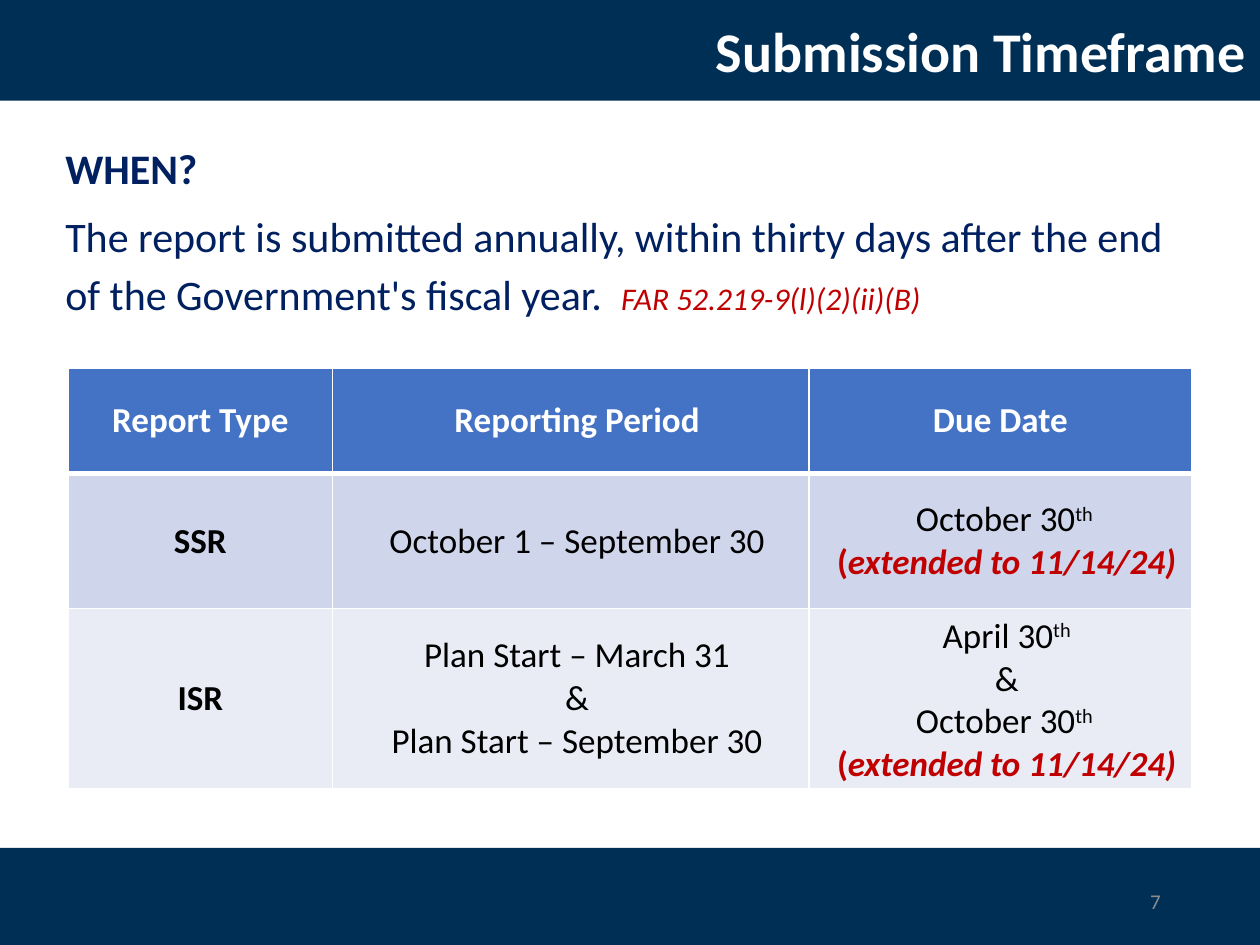
import pptx
import pptx.dml.color
import pptx.enum.shapes
import pptx.enum.text
import pptx.oxml
import pptx.oxml.ns
import pptx.util

Inches = pptx.util.Inches
Pt = pptx.util.Pt
ALIGN = pptx.enum.text.PP_ALIGN
MIDDLE = pptx.enum.text.MSO_ANCHOR.MIDDLE
NAVY, WHITE, BLACK, RED = "002F56", "FFFFFF", "000000", "C00000"


def color(value):
    return pptx.dml.color.RGBColor.from_string(value)


def write(frame, paragraphs, base, layout):
    """Fill a text frame; each paragraph is a list of (text, changes to base)."""
    for index, runs in enumerate(paragraphs):
        paragraph = frame.add_paragraph() if index else frame.paragraphs[0]
        for name, value in layout.items():
            setattr(paragraph, name, value)
        for text, changes in runs:
            run = paragraph.add_run()
            run.text = text
            run.font.name = "Calibri"
            for name, value in {**base, **changes}.items():
                if name == "color":
                    run.font.color.rgb = color(value)
                elif name == "baseline":
                    run._r.get_or_add_rPr().set("baseline", str(value))
                else:
                    setattr(run.font, name, value)


presentation = pptx.Presentation()
presentation.slide_width, presentation.slide_height = Inches(10), Inches(7.5)
slide = presentation.slides.add_slide(presentation.slide_layouts[6])

# Header and footer bands
for top, height in [(0, 0.8), (6.73, 0.77)]:
    band = slide.shapes.add_shape(
        pptx.enum.shapes.MSO_SHAPE.RECTANGLE, 0, Inches(top), Inches(10), Inches(height))
    band.shadow.inherit = False
    band.fill.solid()
    band.fill.fore_color.rgb = color(NAVY)
    band.line.fill.background()

# Title, body and page number
title = [[("Submission Timeframe", {})]]
body = [
    [("WHEN?", {"bold": True})],
    [("The report is submitted annually, within thirty days after the end "
      "of the Government's fiscal year.  ", {}),
     ("FAR 52.219-9(l)(2)(ii)(B)", {"size": Pt(18), "color": RED, "italic": True})],
]
text_boxes = [
    ((2.58, 0.05, 7.41, 0.77), MIDDLE, title,
     {"size": Pt(32), "color": WHITE, "bold": True},
     {"alignment": ALIGN.RIGHT, "line_spacing": 0.9}),
    ((0.42, 1.03, 9.17, 1.54), pptx.enum.text.MSO_ANCHOR.TOP, body,
     {"size": Pt(24), "color": "002060"},
     {"line_spacing": 1.14, "space_after": Pt(6)}),
    ((7.06, 6.95, 2.25, 0.4), MIDDLE, [[("7", {})]],
     {"size": Pt(12), "color": "8C8C8C"}, {"alignment": ALIGN.RIGHT}),
]
for box, anchor, paragraphs, base, layout in text_boxes:
    frame = slide.shapes.add_textbox(*map(Inches, box)).text_frame
    frame.word_wrap = True
    frame.vertical_anchor = anchor
    write(frame, paragraphs, base, layout)

# Table contents
bold = {"bold": True}
raised = {"baseline": 30000}
extended = [("(", {"bold": True, "color": RED}),
            ("extended to 11/14/24)", {"bold": True, "color": RED, "italic": True})]
october = [("October 30", {}), ("th ", raised)]
rows = [
    [[[(heading, bold)]] for heading in ("Report Type", "Reporting Period", "Due Date")],
    [[[("SSR", bold)]], [[("October 1 – September 30", {})]], [october, extended]],
    [[[("ISR", bold)]],
     [[("Plan Start – March 31", {})], [("&", {})], [("Plan Start – September 30", {})]],
     [[("April 30", {}), ("th", raised)], [("&", {})], october, extended]],
]
column_widths = [2.1, 3.78, 3.04]
row_heights = [0.84, 1.07, 1.43]
row_colors = [("4472C4", WHITE), ("CFD5EA", BLACK), ("E9EBF5", BLACK)]

# Report table
table = slide.shapes.add_table(
    3, 3, Inches(0.54), Inches(2.92), Inches(8.92), Inches(3.34)).table
for column, width in zip(table.columns, column_widths):
    column.width = Inches(width)
for row, height in zip(table.rows, row_heights):
    row.height = Inches(height)

for row_index, (cells, (fill, text_color)) in enumerate(zip(rows, row_colors)):
    for column_index, paragraphs in enumerate(cells):
        cell = table.cell(row_index, column_index)
        cell.vertical_anchor = MIDDLE
        indented = column_index == 1 or (column_index == 2 and row_index > 0)
        cell.margin_left = Inches(0.2 if indented else 0.1)
        # White borders, thicker between the heading and the rows below
        heavy_side = {0: "B", 1: "T"}.get(row_index)
        for side in "LRTB":
            width = Pt(3 if side == heavy_side else 1)
            cell._tc.get_or_add_tcPr().append(pptx.oxml.parse_xml(
                f'<a:ln{side} {pptx.oxml.ns.nsdecls("a")} w="{width}"><a:solidFill>'
                f'<a:srgbClr val="{WHITE}"/></a:solidFill></a:ln{side}>'))
        cell.fill.solid()
        cell.fill.fore_color.rgb = color(fill)
        write(cell.text_frame, paragraphs,
              {"size": Pt(20), "color": text_color, "bold": False},
              {"alignment": ALIGN.CENTER})

presentation.save("out.pptx")
